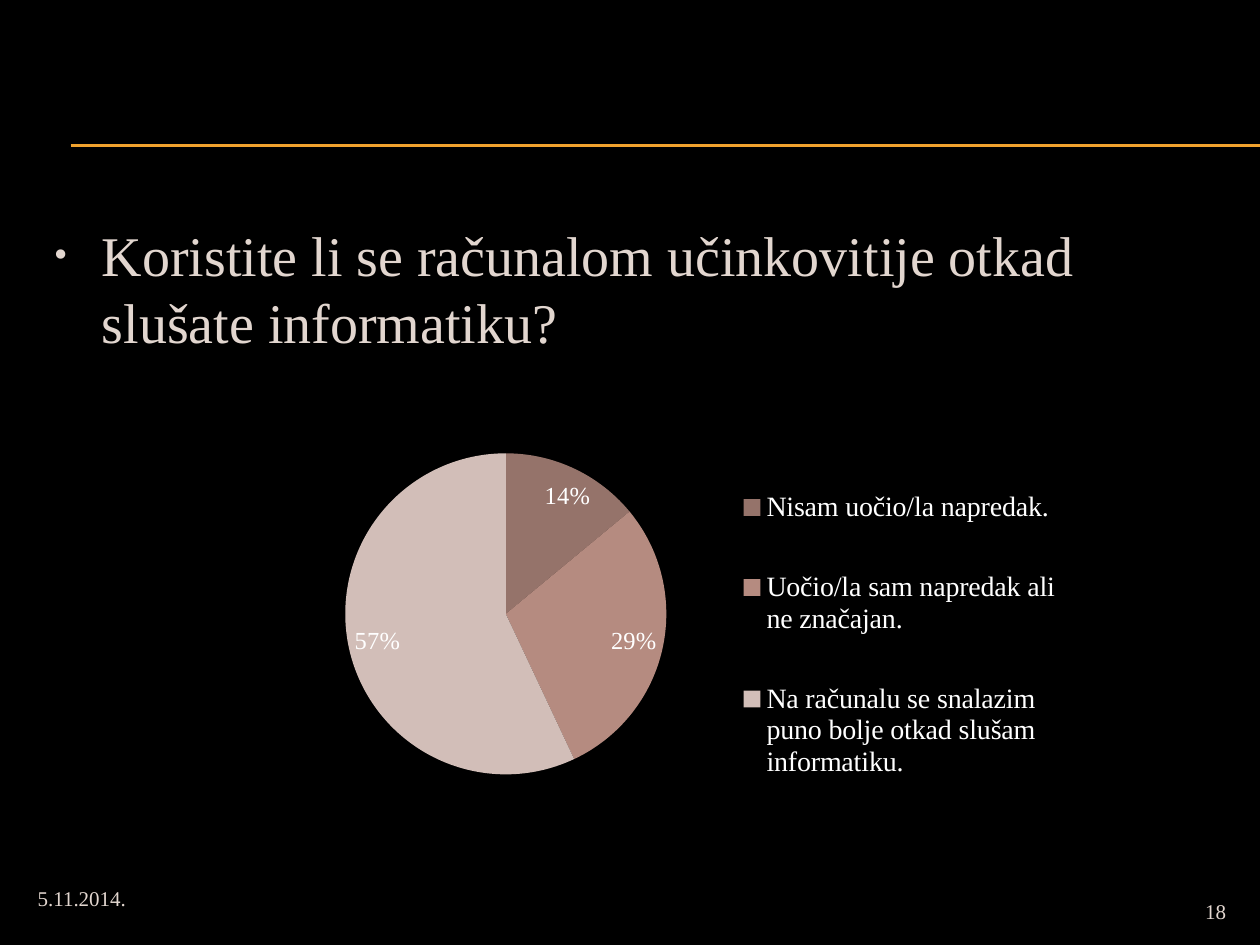
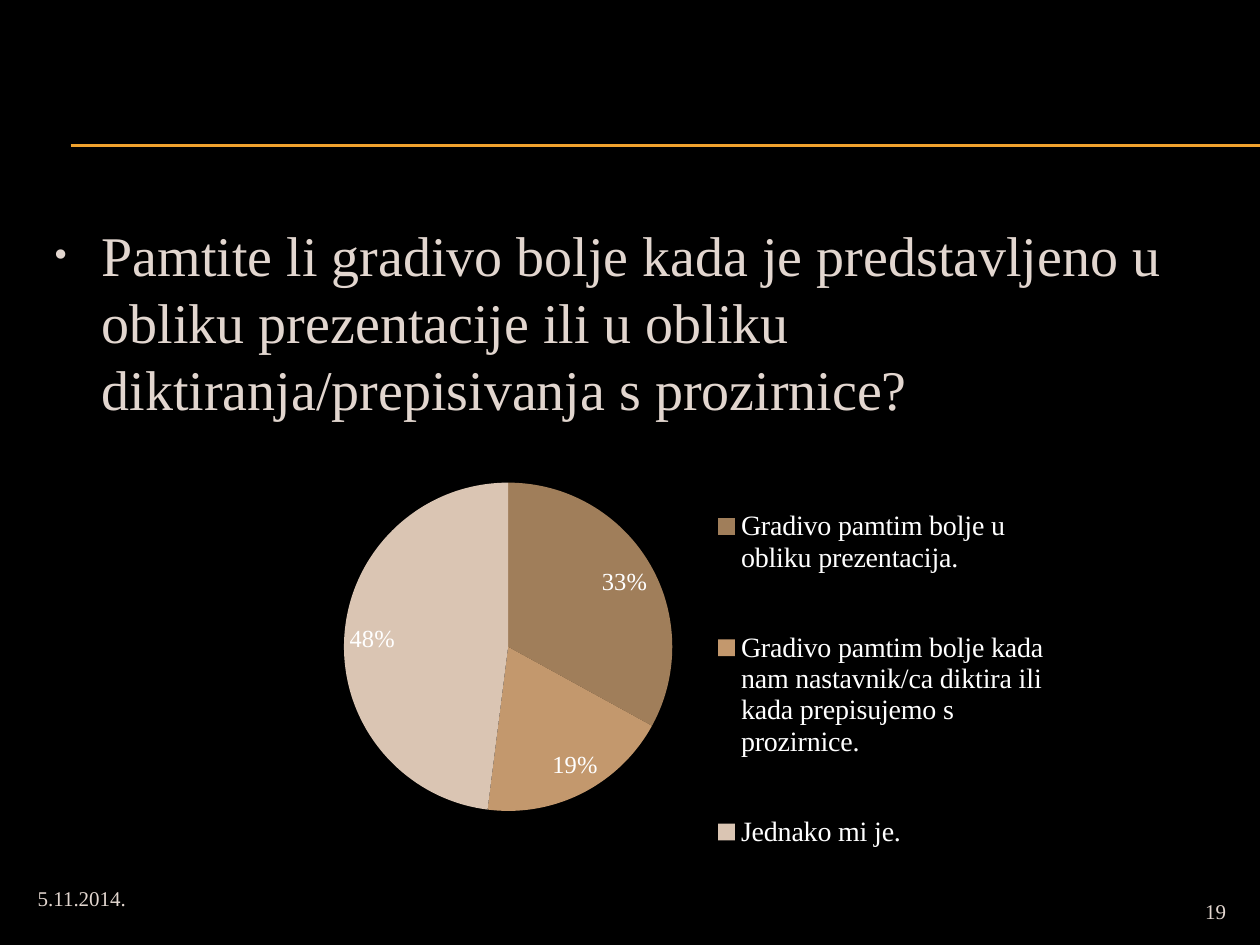
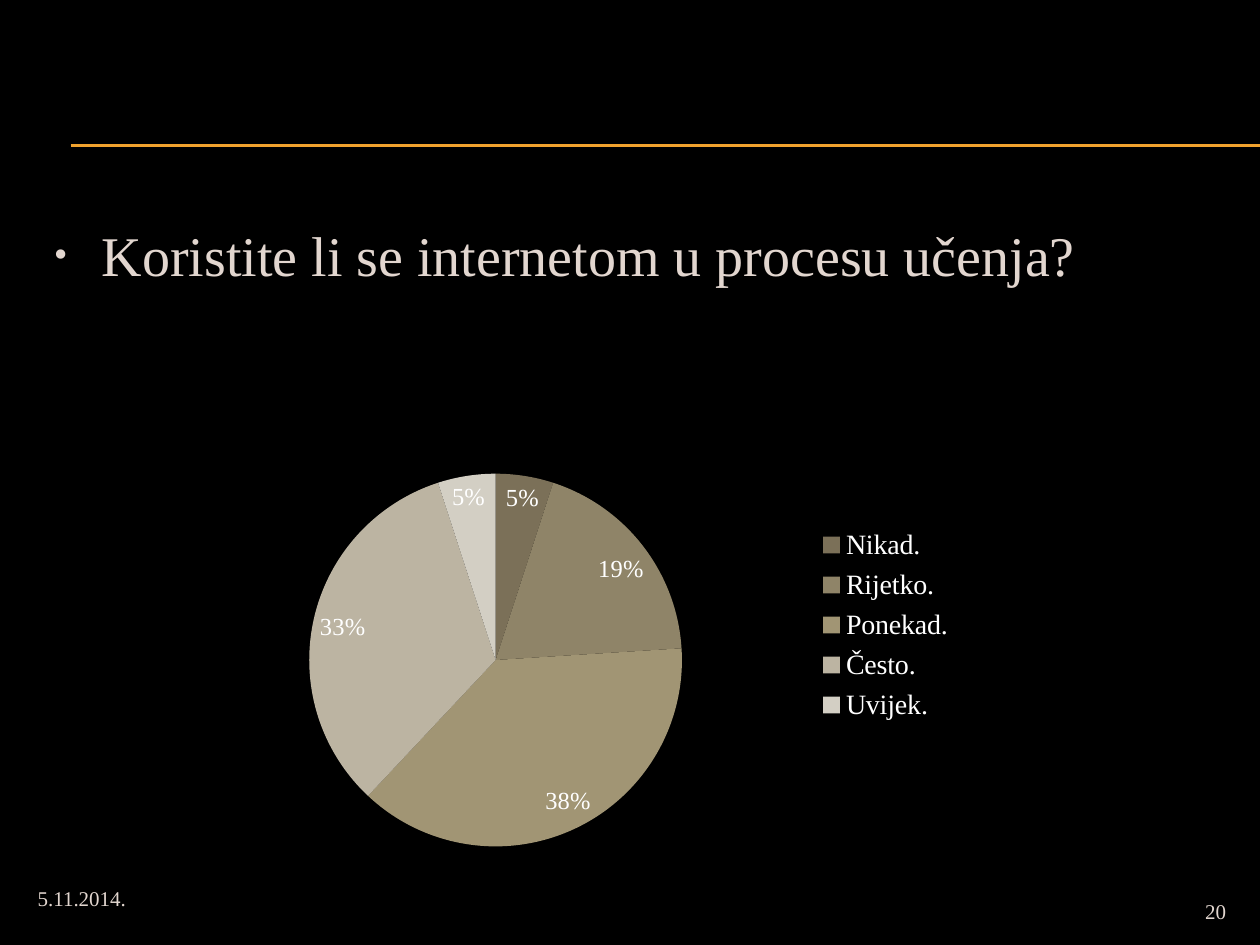
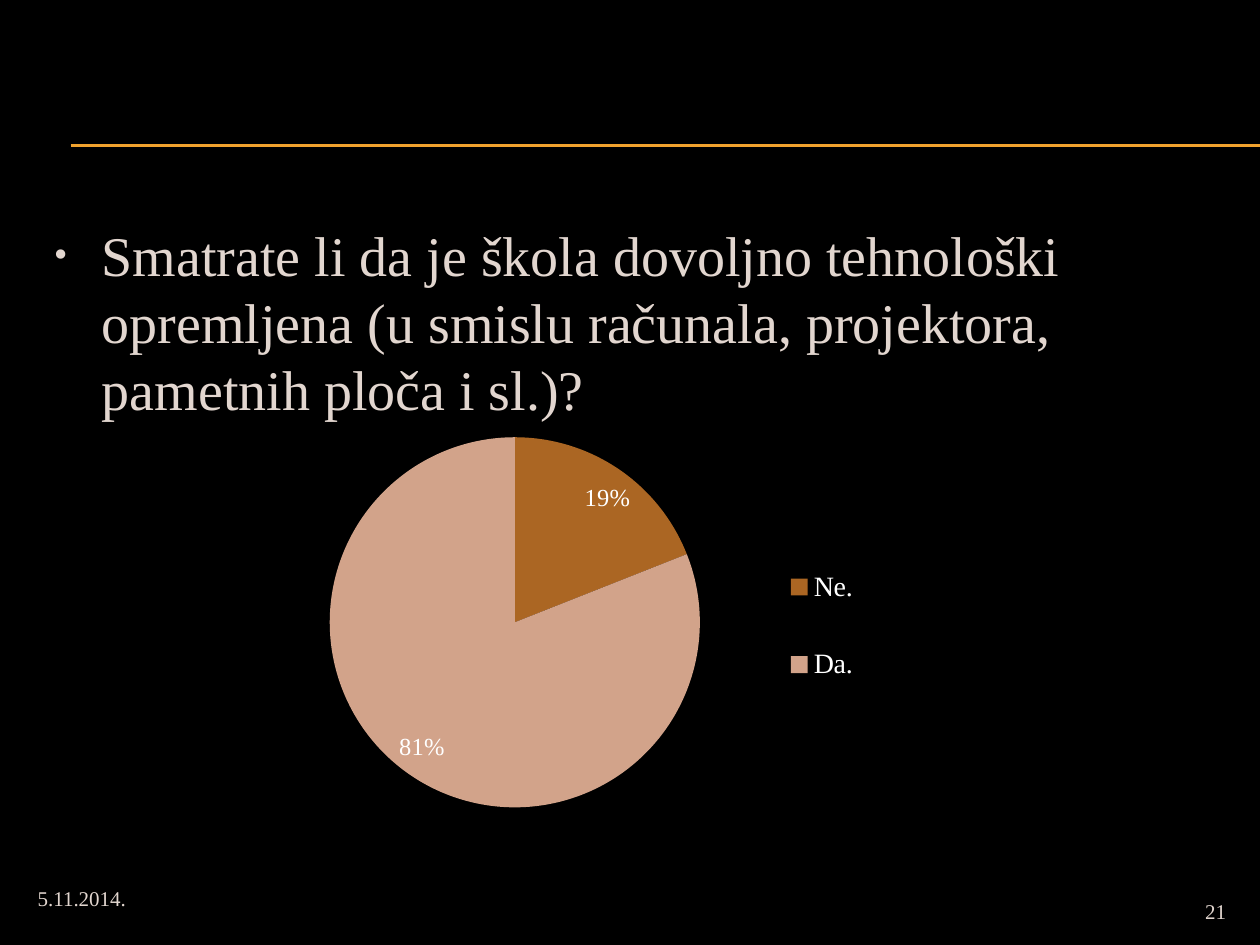
from lxml import etree
from pptx import Presentation
from pptx.chart.data import CategoryChartData
from pptx.dml.color import RGBColor
from pptx.enum.chart import XL_CHART_TYPE, XL_LABEL_POSITION, XL_LEGEND_POSITION
from pptx.enum.shapes import MSO_CONNECTOR
from pptx.enum.text import PP_ALIGN
from pptx.oxml.ns import qn
from pptx.util import Pt

PIE = XL_CHART_TYPE.PIE
BEST_FIT = XL_LABEL_POSITION.BEST_FIT
LEGEND_RIGHT = XL_LEGEND_POSITION.RIGHT
STRAIGHT = MSO_CONNECTOR.STRAIGHT
LEFT, RIGHT = PP_ALIGN.LEFT, PP_ALIGN.RIGHT

FONT = "Times New Roman"
COLORS = {"background": "000000", "rule": "F0A22E", "text": "E2D6CF", "chart": "FFFFFF"}
DATE = "5.11.2014."
FIRST_NUMBER = 18

# Boxes are (left, top, width, height) in points.
SLIDE_SIZE = (720, 540)
QUESTION_BOX = (23.76, 122.4, 684, 356.4)
DATE_BOX = (14.4, 502.56, 198, 23.04)
NUMBER_BOX = (648, 509.76, 59.76, 19.44)
RULE_LEFT, RULE_TOPS = 40.32, (82.8, 83.52)
BULLET_INDENT = 27.36

# "plot" and "legend" are fractions of the chart box.
SURVEY = [
    {
        "question": "Koristite li se računalom učinkovitije otkad slušate informatiku?",
        "answers": [
            ("Nisam uočio/la napredak.", 14, "95736A"),
            ("Uočio/la sam napredak ali ne značajan.", 29, "B58B80"),
            ("Na računalu se snalazim puno bolje otkad slušam informatiku.", 57, "D2BEB8"),
        ],
        "box": (133.2, 224.64, 493.2, 260.64),
        "plot": (0.105, 0.132, 0.422, 0.704),
        "legend": (0.587, 0.11, 0.37, 0.84),
    },
    {
        "question": "Pamtite li gradivo bolje kada je predstavljeno u obliku prezentacije "
                    "ili u obliku diktiranja/prepisivanja s prozirnice?",
        "answers": [
            ("Gradivo pamtim bolje u obliku prezentacija.", 33, "A07E5A"),
            ("Gradivo pamtim bolje kada nam nastavnik/ca diktira ili "
             "kada prepisujemo s prozirnice.", 19, "C3986D"),
            ("Jednako mi je.", 48, "DAC5B3"),
        ],
        "box": (156.24, 247.68, 447.84, 272.88),
        "plot": (0.09, 0.103, 0.419, 0.688),
        "legend": (0.55, 0.04, 0.45, 0.95),
    },
    {
        "question": "Koristite li se internetom u procesu učenja?",
        "answers": [
            ("Nikad.", 5, "7B7058"),
            ("Rijetko.", 19, "8F8468"),
            ("Ponekad.", 38, "A19574"),
            ("Često.", 33, "BCB4A2"),
            ("Uvijek.", 5, "D3CFC4"),
        ],
        "box": (59.76, 196.56, 615.6, 306),
        "plot": (0.19, 0.242, 0.346, 0.697),
        "legend": (0.655, 0.33, 0.14, 0.39),
    },
    {
        "question": "Smatrate li da je škola dovoljno tehnološki opremljena "
                    "(u smislu računala, projektora, pametnih ploča i sl.)?",
        "answers": [("Ne.", 19, "AB6623"), ("Da.", 81, "D2A38A")],
        "box": (133.2, 179.28, 468, 329.04),
        "plot": (0.118, 0.214, 0.452, 0.644),
        "legend": (0.664, 0.367, 0.11, 0.35),
    },
]


def color(name):
    return RGBColor.from_string(COLORS[name])


def style_font(font, size, color_name):
    values = {"name": FONT, "size": Pt(size)}
    for attribute, value in values.items():
        setattr(font, attribute, value)
    font.color.rgb = color(color_name)


def add_text(slide, text, box, size, alignment=LEFT):
    frame = slide.shapes.add_textbox(*map(Pt, box)).text_frame
    frame.word_wrap = True
    paragraph = frame.paragraphs[0]
    paragraph.alignment = alignment
    run = paragraph.add_run()
    run.text = text
    style_font(run.font, size, "text")
    return paragraph


def add_bullet(paragraph):
    properties = paragraph._p.get_or_add_pPr()
    properties.set("marL", str(Pt(BULLET_INDENT)))
    properties.set("indent", str(-Pt(BULLET_INDENT)))
    bullet_color = etree.SubElement(properties, qn("a:buClr"))
    etree.SubElement(bullet_color, qn("a:srgbClr"), val=COLORS["text"])
    etree.SubElement(properties, qn("a:buSzPct"), val="70000")
    etree.SubElement(properties, qn("a:buFont"), typeface=FONT)
    etree.SubElement(properties, qn("a:buChar"), char="•")


def add_rules(slide):
    for top in RULE_TOPS:
        rule = slide.shapes.add_connector(
            STRAIGHT, Pt(RULE_LEFT), Pt(top), Pt(SLIDE_SIZE[0]), Pt(top))
        rule.line.color.rgb = color("rule")
        rule.line.width = Pt(0.75)
        etree.SubElement(rule._element.spPr, qn("a:effectLst"))


def set_layout(parent, position, fractions, inner=False):
    """Fix the place of a chart part; position is the layout's index in parent."""
    for old_layout in parent.findall(qn("c:layout")):
        parent.remove(old_layout)
    layout = etree.Element(qn("c:layout"))
    parent.insert(position, layout)
    manual = etree.SubElement(layout, qn("c:manualLayout"))
    entries = [("layoutTarget", "inner")] if inner else []
    entries += [("xMode", "edge"), ("yMode", "edge"), *zip("xywh", fractions)]
    for tag, value in entries:
        etree.SubElement(manual, qn(f"c:{tag}"), val=str(value))


def add_pie(slide, survey):
    labels, shares, slice_colors = zip(*survey["answers"])
    data = CategoryChartData()
    data.categories = labels
    data.add_series("Series 1", shares)
    chart = slide.shapes.add_chart(PIE, *map(Pt, survey["box"]), data).chart
    chart.has_title = False
    style_font(chart.font, 10, "chart")

    chart.has_legend = True
    chart.legend.position = LEGEND_RIGHT
    chart.legend.include_in_layout = False
    style_font(chart.legend.font, 16, "chart")

    plot = chart.plots[0]
    plot.vary_by_categories = True
    for index, slice_color in enumerate(slice_colors):
        part = plot.series[0].points[index].format
        part.fill.solid()
        part.fill.fore_color.rgb = RGBColor.from_string(slice_color)
        part.line.fill.background()

    plot.has_data_labels = True
    label_values = {"show_percentage": True, "show_value": False, "number_format": "0%",
                    "number_format_is_linked": False, "position": BEST_FIT}
    for attribute, value in label_values.items():
        setattr(plot.data_labels, attribute, value)
    style_font(plot.data_labels.font, 14, "chart")

    chart_root = chart.element
    set_layout(chart_root.find(".//" + qn("c:plotArea")), 0, survey["plot"], inner=True)
    set_layout(chart_root.find(".//" + qn("c:legend")), 1, survey["legend"])


def add_survey_slide(presentation, survey, number):
    slide = presentation.slides.add_slide(presentation.slide_layouts[6])
    slide.background.fill.solid()
    slide.background.fill.fore_color.rgb = color("background")
    add_rules(slide)
    question = add_text(slide, survey["question"], QUESTION_BOX, 32)
    question.space_before = Pt(6.4)
    add_bullet(question)
    add_text(slide, DATE, DATE_BOX, 12)
    add_text(slide, str(number), NUMBER_BOX, 12, RIGHT)
    add_pie(slide, survey)


def main():
    presentation = Presentation()
    presentation.slide_width, presentation.slide_height = map(Pt, SLIDE_SIZE)
    for number, survey in enumerate(SURVEY, FIRST_NUMBER):
        add_survey_slide(presentation, survey, number)
    presentation.save("out.pptx")


if __name__ == "__main__":
    main()
